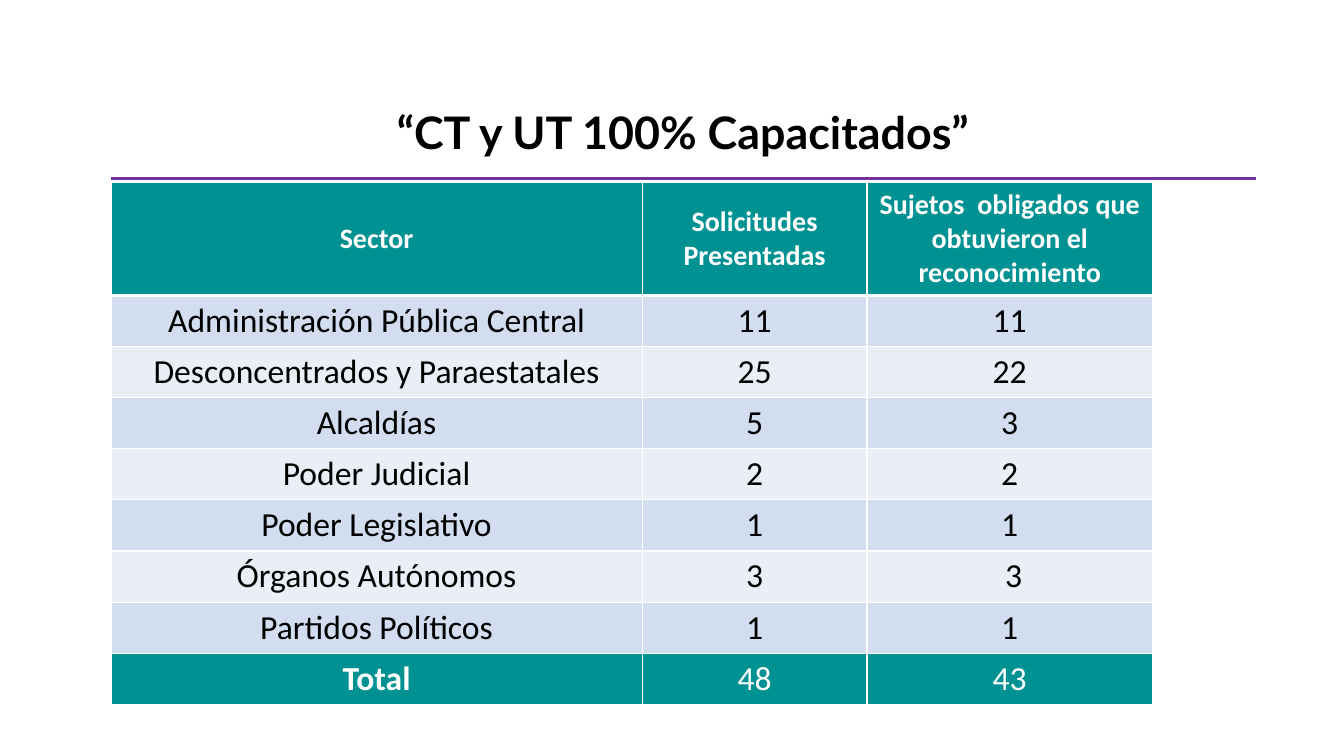
"""Build the slide with the table of trained committees by sector."""
from lxml import etree
from pptx import Presentation
from pptx import util as u
from pptx.dml.color import RGBColor
from pptx.enum import shapes, text
from pptx.oxml.ns import qn

TITLE = "“CT y UT 100% Capacitados”"
ROWS = [
    ("Sector", "Solicitudes Presentadas",
     "Sujetos  obligados que obtuvieron el reconocimiento"),
    ("Administración Pública Central", "11", "11"),
    ("Desconcentrados y Paraestatales", "25", "22"),
    ("Alcaldías", "5", "3"),
    ("Poder Judicial", "2", "2"),
    ("Poder Legislativo", "1", "1"),
    ("Órganos Autónomos", "3", " 3"),
    ("Partidos Políticos", "1", "1"),
    ("Total", "48", "43"),
]
COLORS = {"teal": "009193", "dark": "D2DEEF", "light": "EAEFF7",
          "rule": "7030A0", "white": "FFFFFF", "black": "000000"}
LEFT, RULE_Y, RULE_END = 1.1, 1.77, 12.46
TITLE_BOX = (3.15, 1.05, 7.25, 0.71)
TABLE_TOP = 1.81
COLS = (5.27, 2.23, 2.83)
HEAD_H, ROW_H = 1.12, 0.5


def rgb(name):
    return RGBColor.from_string(COLORS[name])


def set_borders(cell, top, bottom):
    tc_pr = cell._tc.get_or_add_tcPr()
    for side, width in (("L", 1), ("R", 1), ("T", top), ("B", bottom)):
        ln = etree.SubElement(tc_pr, qn(f"a:ln{side}"), w=str(u.Pt(width)))
        fill = etree.SubElement(ln, qn("a:solidFill"))
        etree.SubElement(fill, qn("a:srgbClr"), val=COLORS["white"])


def style(p, font, size, color, bold):
    p.alignment = text.PP_ALIGN.CENTER
    p.font.name, p.font.size, p.font.bold = font, u.Pt(size), bold
    p.font.color.rgb = rgb(color)


def add_title(s):
    sp = s.shapes.title
    sp.left, sp.top, sp.width, sp.height = map(u.Inches, TITLE_BOX)
    tf = sp.text_frame
    tf.text = TITLE
    tf.word_wrap = True
    tf.auto_size = text.MSO_AUTO_SIZE.NONE
    tf.vertical_anchor = text.MSO_ANCHOR.TOP
    p = tf.paragraphs[0]
    p.line_spacing = 0.9
    style(p, "Lato", 32, "black", True)


def add_rule(s):
    y = u.Inches(RULE_Y)
    line = s.shapes.add_connector(shapes.MSO_CONNECTOR.STRAIGHT,
                                  u.Inches(LEFT), y, u.Inches(RULE_END), y)
    line.line.color.rgb = rgb("rule")
    line.line.width = u.Pt(2.25)
    etree.SubElement(line._element.spPr, qn("a:effectLst"))


def add_sectors(s):
    last = len(ROWS) - 1
    table = s.shapes.add_table(
        len(ROWS), len(COLS), u.Inches(LEFT), u.Inches(TABLE_TOP),
        u.Inches(sum(COLS)), u.Inches(HEAD_H + last * ROW_H)).table
    for col, width in zip(table.columns, COLS):
        col.width = u.Inches(width)
    for i, values in enumerate(ROWS):
        head, strong = i == 0, i in (0, last)
        table.rows[i].height = u.Inches(HEAD_H if head else ROW_H)
        band = "teal" if strong else "dark" if i % 2 else "light"
        for j, value in enumerate(values):
            cell = table.cell(i, j)
            set_borders(cell, 3 if i == 1 else 1, 3 if head else 1)
            cell.fill.solid()
            cell.fill.fore_color.rgb = rgb(band)
            cell.vertical_anchor = text.MSO_ANCHOR.MIDDLE
            cell.text = value
            style(cell.text_frame.paragraphs[0], "Calibri", 20 if head else 24,
                  "white" if strong else "black", head or (strong and j == 0))


def main():
    prs = Presentation()
    prs.slide_width, prs.slide_height = u.Inches(13.33), u.Inches(7.5)
    s = prs.slides.add_slide(prs.slide_layouts.get_by_name("Title Only"))
    add_rule(s)
    add_title(s)
    add_sectors(s)
    prs.save("out.pptx")


if __name__ == "__main__":
    main()
